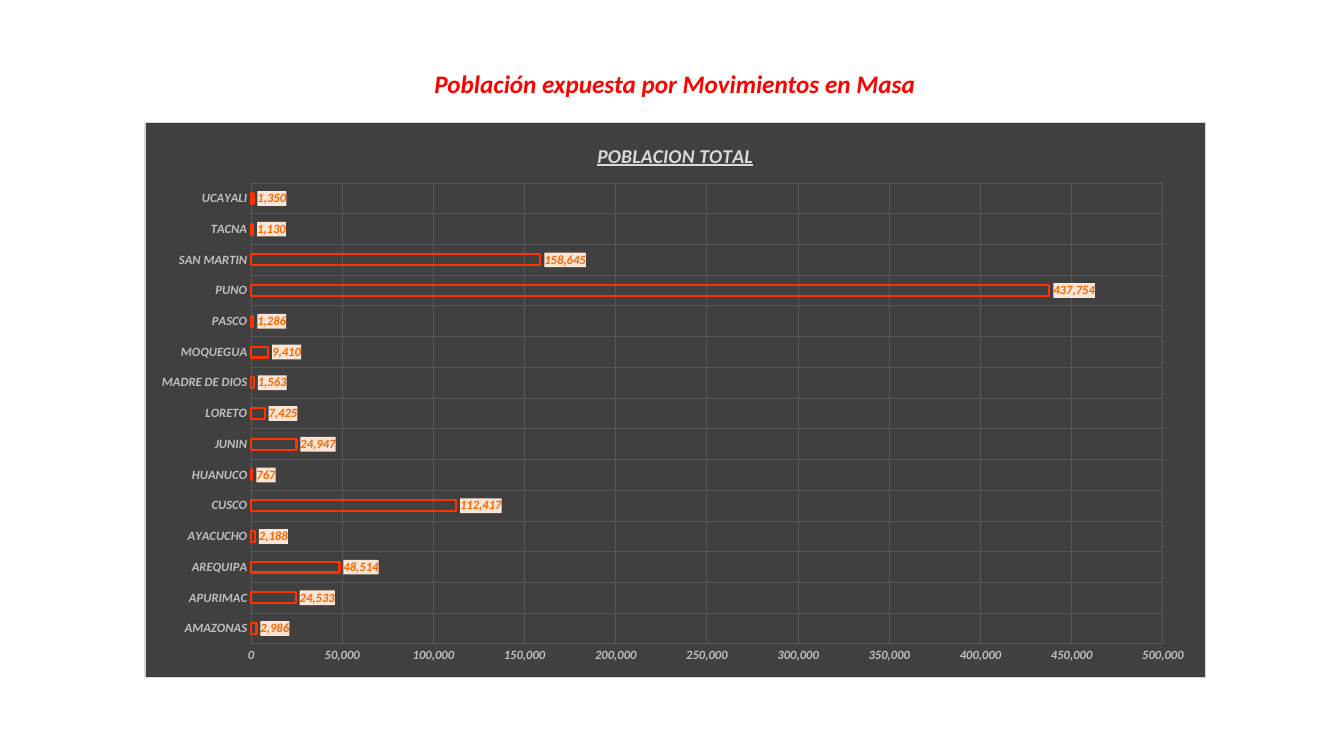
"""Build a slide with a bar chart of the population exposed to mass movements."""
from lxml import etree
from pptx import Presentation
from pptx.chart.data import CategoryChartData
from pptx.dml.color import RGBColor
from pptx.enum.chart import XL_CHART_TYPE, XL_LABEL_POSITION, XL_TICK_MARK
from pptx.enum.text import MSO_ANCHOR, MSO_AUTO_SIZE, PP_ALIGN
from pptx.oxml.ns import qn
from pptx.util import Pt

BAR = XL_CHART_TYPE.BAR_CLUSTERED
OUTSIDE_END = XL_LABEL_POSITION.OUTSIDE_END
NO_TICK = XL_TICK_MARK.NONE
CENTER = PP_ALIGN.CENTER
MIDDLE = MSO_ANCHOR.MIDDLE
GROW = MSO_AUTO_SIZE.SHAPE_TO_FIT_TEXT

HEADING = "Población expuesta por Movimientos en Masa"
CHART_TITLE = "POBLACION TOTAL"
POPULATION = {
    "AMAZONAS": 2986,
    "APURIMAC": 24533,
    "AREQUIPA": 48514,
    "AYACUCHO": 2188,
    "CUSCO": 112417,
    "HUANUCO": 767,
    "JUNIN": 24947,
    "LORETO": 7425,
    "MADRE DE DIOS": 1563,
    "MOQUEGUA": 9410,
    "PASCO": 1286,
    "PUNO": 437754,
    "SAN MARTIN": 158645,
    "TACNA": 1130,
    "UCAYALI": 1350,
}
NUMBER_FORMAT = "#,##0"
PAGE_SIZE = (960, 540)
HEADING_BOX = (301, 45.4, 362, 28.8)
CHART_BOX = (103.2, 86.8, 758.2, 397.4)
PLOT_AREA = {"x": 0.1, "y": 0.11, "w": 0.86, "h": 0.83}

THEME = {
    "font": "Calibri",
    "heading": "FF0000", "heading_size": 18,
    "title": "D9D9D9", "title_size": 14,
    "axis": "BFBFBF", "label": "FF6600", "small_size": 9,
    "panel": "404040", "panel_border": "D9D9D9", "grid": "595959",
    "bar": "FF3300", "label_fill": "FBE5D6",
}


def format_font(font, color, size, underline=None):
    font.name = THEME["font"]
    font.size = Pt(size)
    font.bold = font.italic = True
    font.underline = underline
    font.color.rgb = RGBColor.from_string(color)


def write(frame, text, **style):
    para = frame.paragraphs[0]
    para.alignment = CENTER
    span = para.add_run()
    span.text = text
    format_font(span.font, **style)


def style_line(line, color, width):
    line.color.rgb = RGBColor.from_string(color)
    line.width = Pt(width)


def fill_after(element, color, border=None):
    properties = etree.Element(qn("c:spPr"))

    def add_fill(parent, value):
        fill = etree.SubElement(parent, qn("a:solidFill"))
        etree.SubElement(fill, qn("a:srgbClr"), val=value)

    add_fill(properties, color)
    if border:
        add_fill(etree.SubElement(properties, qn("a:ln"), w=str(Pt(0.75))), border)
    element.addnext(properties)


def place_plot(plot_area):
    for old_layout in plot_area.findall(qn("c:layout")):
        plot_area.remove(old_layout)
    layout = etree.Element(qn("c:layout"))
    manual = etree.SubElement(layout, qn("c:manualLayout"))
    settings = {"layoutTarget": "inner", "xMode": "edge", "yMode": "edge", **PLOT_AREA}
    for name, value in settings.items():
        etree.SubElement(manual, qn("c:" + name), val=str(value))
    plot_area.insert(0, layout)


def style_axis(axis):
    axis.major_tick_mark = axis.minor_tick_mark = NO_TICK
    axis.format.line.fill.background()
    axis.has_major_gridlines = True
    style_line(axis.major_gridlines.format.line, THEME["grid"], 0.75)
    format_font(axis.tick_labels.font, THEME["axis"], THEME["small_size"])


def add_heading(page):
    box = page.shapes.add_textbox(*map(Pt, HEADING_BOX))
    frame = box.text_frame
    frame.word_wrap = False
    frame.auto_size = GROW
    frame.vertical_anchor = MIDDLE
    write(frame, HEADING, color=THEME["heading"], size=THEME["heading_size"])


def add_population_chart(page):
    data = CategoryChartData(number_format=NUMBER_FORMAT)
    data.categories = list(POPULATION)
    data.add_series("Series 1", list(POPULATION.values()))
    chart = page.shapes.add_chart(BAR, *map(Pt, CHART_BOX), data).chart
    chart.font.name = THEME["font"]
    chart.font.size = Pt(10)
    chart.has_legend = False
    chart.has_title = True
    write(chart.chart_title.text_frame, CHART_TITLE, color=THEME["title"],
          size=THEME["title_size"], underline=True)
    chart.chart_title.include_in_layout = False

    for axis in (chart.category_axis, chart.value_axis):
        style_axis(axis)
    chart.value_axis.minimum_scale = 0
    chart.value_axis.maximum_scale = 500000
    chart.value_axis.major_unit = 50000
    chart.value_axis.tick_labels.number_format = NUMBER_FORMAT
    chart.value_axis.tick_labels.number_format_is_linked = False

    plot = chart.plots[0]
    plot.vary_by_categories = False
    plot.gap_width = 182
    plot.overlap = -50
    bars = plot.series[0]
    bars.invert_if_negative = False
    bars.format.fill.background()
    style_line(bars.format.line, THEME["bar"], 1.5)

    labels = bars.data_labels
    labels.show_value = True
    labels.position = OUTSIDE_END
    labels.number_format = NUMBER_FORMAT
    labels.number_format_is_linked = False
    format_font(labels.font, THEME["label"], THEME["small_size"])

    root = chart.element
    fill_after(root.find(".//" + qn("c:dLbls")).find(qn("c:numFmt")), THEME["label_fill"])
    fill_after(root.find(qn("c:chart")), THEME["panel"], THEME["panel_border"])
    place_plot(root.find(".//" + qn("c:plotArea")))


def main():
    deck = Presentation()
    deck.slide_width, deck.slide_height = map(Pt, PAGE_SIZE)
    page = deck.slides.add_slide(deck.slide_layouts[6])
    add_heading(page)
    add_population_chart(page)
    deck.save("out.pptx")


if __name__ == "__main__":
    main()
